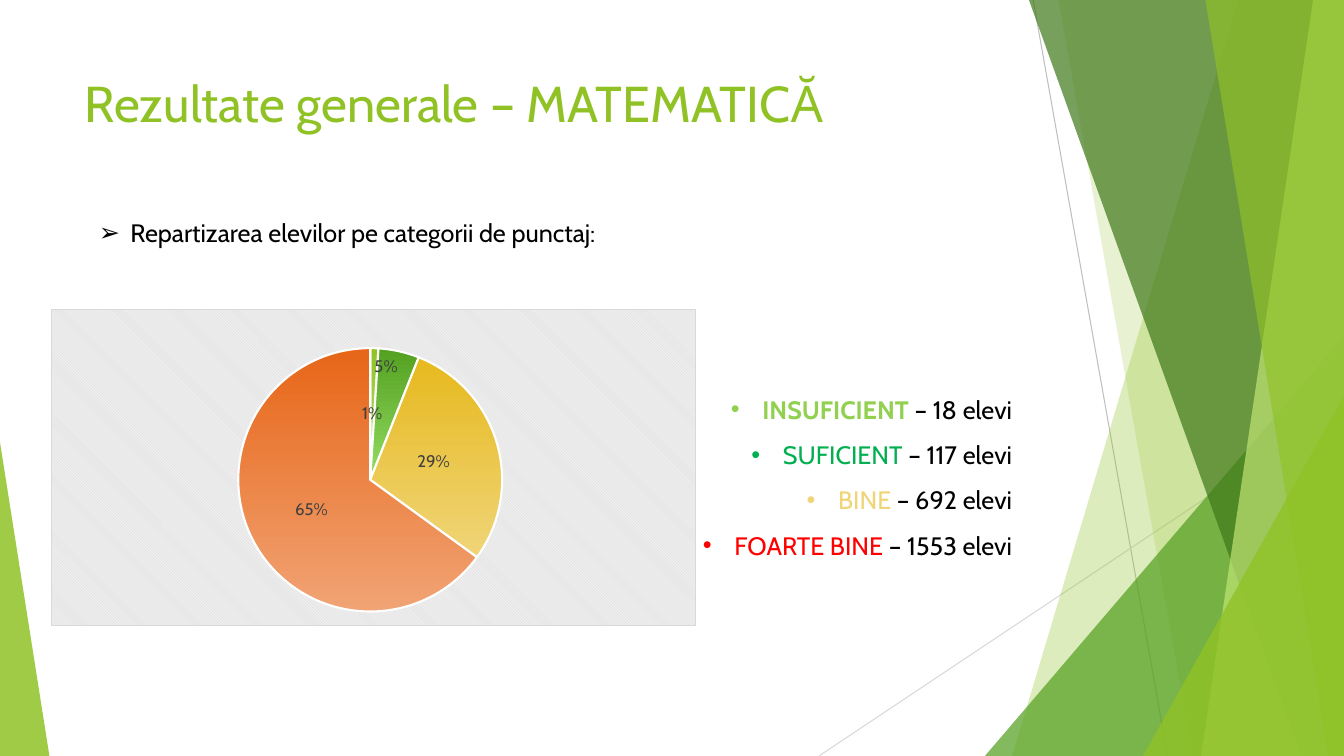
"""Build the slide with general mathematics results."""
from dataclasses import dataclass

from lxml import etree
from pptx import Presentation, util as u
from pptx.chart.data import CategoryChartData
from pptx.dml.color import RGBColor
from pptx.enum import chart as ch, shapes, text
from pptx.oxml import parse_xml
from pptx.oxml.ns import nsdecls, qn

Pt = u.Pt
FONT = "Cabin"
WIDE, HIGH = 960, 540
BLACK = RGBColor(0, 0, 0)
WHITE = RGBColor(255, 255, 255)
DARK = RGBColor(0x40, 0x40, 0x40)
GREY = RGBColor(0xBF, 0xBF, 0xBF)
PALE = RGBColor(0xD9, 0xD9, 0xD9)
LIME = RGBColor(0x90, 0xC2, 0x26)
MINT = RGBColor(0xC0, 0xE4, 0x74)
LEAF = RGBColor(0x54, 0xA0, 0x21)
MOSS = RGBColor(0x3F, 0x78, 0x19)
SAND = RGBColor(0xF0, 0xD5, 0x78)


@dataclass
class Ray:
    start: tuple[float, float]
    end: tuple[float, float]
    color: RGBColor


@dataclass
class Blade:
    top: float
    base: float
    color: RGBColor
    alpha: int


@dataclass
class Wedge:
    left: float
    top: float
    width: float
    tip: float
    color: RGBColor
    alpha: int


@dataclass
class Group:
    name: str
    count: str
    color: RGBColor
    share: int
    fade: tuple[RGBColor, RGBColor]
    bold: bool = False


RAYS = [
    Ray((738, 0), (834, HIGH), GREY),
    Ray((WIDE, 290), (585, HIGH), PALE),
]
SHARDS = [
    Blade(884.4, 723, LIME, 30),
    Blade(756, 852, LIME, 20),
    Wedge(703.5, 240, 256.5, 1, LEAF, 72),
    Blade(735, 929.5, MOSS, 70),
    Blade(938, 858, MINT, 70),
    Blade(861, 949, LIME, 65),
    Wedge(816.5, 283, 143.5, 1, LIME, 80),
    Wedge(0, 316, 35.3, 0, LIME, 85),
]
GROUPS = [
    Group("INSUFICIENT", " – 18 elevi", RGBColor(0x92, 0xD0, 0x50), 1, (LIME, MINT), True),
    Group("SUFICIENT", " – 117 elevi", RGBColor(0, 0xB0, 0x50), 5,
          (LEAF, RGBColor(0x94, 0xDE, 0x61))),
    Group("BINE", " – 692 elevi", SAND, 29, (RGBColor(0xE6, 0xB9, 0x1E), SAND)),
    Group("FOARTE BINE ", "– 1553 elevi", RGBColor(0xFF, 0, 0), 65,
          (RGBColor(0xE7, 0x66, 0x18), RGBColor(0xF1, 0xA3, 0x74))),
]


def draw_ray(slide, ray: Ray) -> None:
    ends = [Pt(n) for n in ray.start + ray.end]
    line = slide.shapes.add_connector(shapes.MSO_CONNECTOR.STRAIGHT, *ends)
    line.line.color.rgb = ray.color
    line.line.width = Pt(0.75)
    etree.SubElement(line._element.spPr, qn("a:effectLst"))


def draw_shard(slide, shard: Blade | Wedge) -> None:
    if isinstance(shard, Blade):
        form = slide.shapes.build_freeform(Pt(shard.top), 0)
        edge = [(WIDE, 0), (WIDE, HIGH), (shard.base, HIGH)]
        form.add_line_segments([(Pt(x), Pt(y)) for x, y in edge], close=True)
        shape = form.convert_to_shape()
    else:
        shape = slide.shapes.add_shape(
            shapes.MSO_SHAPE.ISOSCELES_TRIANGLE, Pt(shard.left), Pt(shard.top),
            Pt(shard.width), Pt(HIGH - shard.top))
        shape.adjustments[0] = shard.tip
    shape.shadow.inherit = False
    shape.line.fill.background()
    shape.fill.solid()
    shape.fill.fore_color.rgb = shard.color
    tint = shape._element.spPr.find(f".//{qn('a:srgbClr')}")
    etree.SubElement(tint, qn("a:alpha"), val=str(shard.alpha * 1000))


def add_box(slide, left: float, top: float, width: float, height: float):
    frame = slide.shapes.add_textbox(Pt(left), Pt(top), Pt(width), Pt(height)).text_frame
    frame.word_wrap = True
    return frame


def write(para, words: str, *, size: float = 18, color: RGBColor = BLACK,
          bold: bool = False) -> None:
    run = para.add_run()
    run.text = words
    run.font.name = FONT
    run.font.size = Pt(size)
    run.font.color.rgb = color
    run.font.bold = bold


def add_mark(para, mark: str) -> None:
    props = para._p.get_or_add_pPr()
    props.set("marL", str(Pt(22.5)))
    props.set("indent", str(-Pt(22.5)))
    etree.SubElement(props, qn("a:buFont"), typeface="Arial")
    etree.SubElement(props, qn("a:buChar"), char=mark)


def draw_pie(slide) -> None:
    data = CategoryChartData()
    data.categories = [str(n) for n in range(1, len(GROUPS) + 1)]
    data.add_series("Series 1", [group.share for group in GROUPS])
    chart = slide.shapes.add_chart(
        ch.XL_CHART_TYPE.PIE, Pt(36.5), Pt(220.5), Pt(460.5), Pt(226.5), data).chart
    chart.has_title = False
    chart.has_legend = False
    chart.font.name = FONT
    chart.font.size = Pt(10)
    chart.font.color.rgb = BLACK
    plot = chart.plots[0]
    plot.vary_by_categories = True
    series = plot.series[0]
    tags = series.data_labels
    tags.show_value = False
    tags.show_percentage = True
    tags.number_format = "0%"
    tags.number_format_is_linked = False
    tags.position = ch.XL_LABEL_POSITION.CENTER
    small = series.points[1].data_label
    small.position = ch.XL_LABEL_POSITION.INSIDE_END
    for font in (tags.font, small.font):
        font.name = FONT
        font.size = Pt(12)
        font.color.rgb = DARK
    label = series._element.find(f".//{qn('c:dLbl')}")
    label.find(qn("c:showVal")).set("val", "0")
    label.find(qn("c:showPercent")).set("val", "1")
    for i, group in enumerate(GROUPS):
        look = series.points[i].format
        look.fill.gradient()
        look.fill.gradient_angle = 270
        for place, (stop, color) in enumerate(zip(look.fill.gradient_stops, group.fade)):
            stop.color.rgb = color
            stop.position = place
        look.line.color.rgb = WHITE
        look.line.width = Pt(1.5)
    area = chart._chartSpace.chart.plotArea
    for old in area.findall(qn("c:layout")):
        area.remove(old)
    sizes = "".join(f'<c:{key} val="{val}"/>' for key, val in
                    [("x", 0.29), ("y", 0.12), ("w", 0.41), ("h", 0.84)])
    area.insert(0, parse_xml(
        f'<c:layout {nsdecls("c")}><c:manualLayout><c:layoutTarget val="inner"/>'
        f'<c:xMode val="edge"/><c:yMode val="edge"/>{sizes}</c:manualLayout></c:layout>'))
    chart._chartSpace.chart.addnext(parse_xml(
        f'<c:spPr {nsdecls("c", "a")}><a:pattFill prst="dkDnDiag">'
        f'<a:fgClr><a:srgbClr val="{WHITE}"/></a:fgClr>'
        '<a:bgClr><a:srgbClr val="E6E6E6"/></a:bgClr></a:pattFill>'
        f'<a:ln w="{Pt(0.75)}"><a:solidFill><a:srgbClr val="{PALE}"/></a:solidFill></a:ln>'
        '</c:spPr>'))


def main() -> None:
    deck = Presentation()
    deck.slide_width, deck.slide_height = Pt(WIDE), Pt(HIGH)
    slide = deck.slides.add_slide(deck.slide_layouts[6])
    for ray in RAYS:
        draw_ray(slide, ray)
    for shard in SHARDS:
        draw_shard(slide, shard)
    title = add_box(slide, 53.5, 48, 677, 104)
    write(title.paragraphs[0], "Rezultate generale – MATEMATICĂ", size=36, color=LIME)
    draw_pie(slide)
    tally = add_box(slide, 250, 267, 480, 134)
    for i, group in enumerate(GROUPS):
        para = tally.add_paragraph() if i else tally.paragraphs[0]
        para.alignment = text.PP_ALIGN.RIGHT
        para.line_spacing = 1.5
        add_mark(para, "•")
        write(para, group.name, color=group.color, bold=group.bold)
        write(para, group.count)
    intro = add_box(slide, 63.5, 152, 480, 29).paragraphs[0]
    add_mark(intro, "➢")
    write(intro, "Repartizarea elevilor pe categorii de punctaj:")
    deck.save("out.pptx")


if __name__ == "__main__":
    main()
